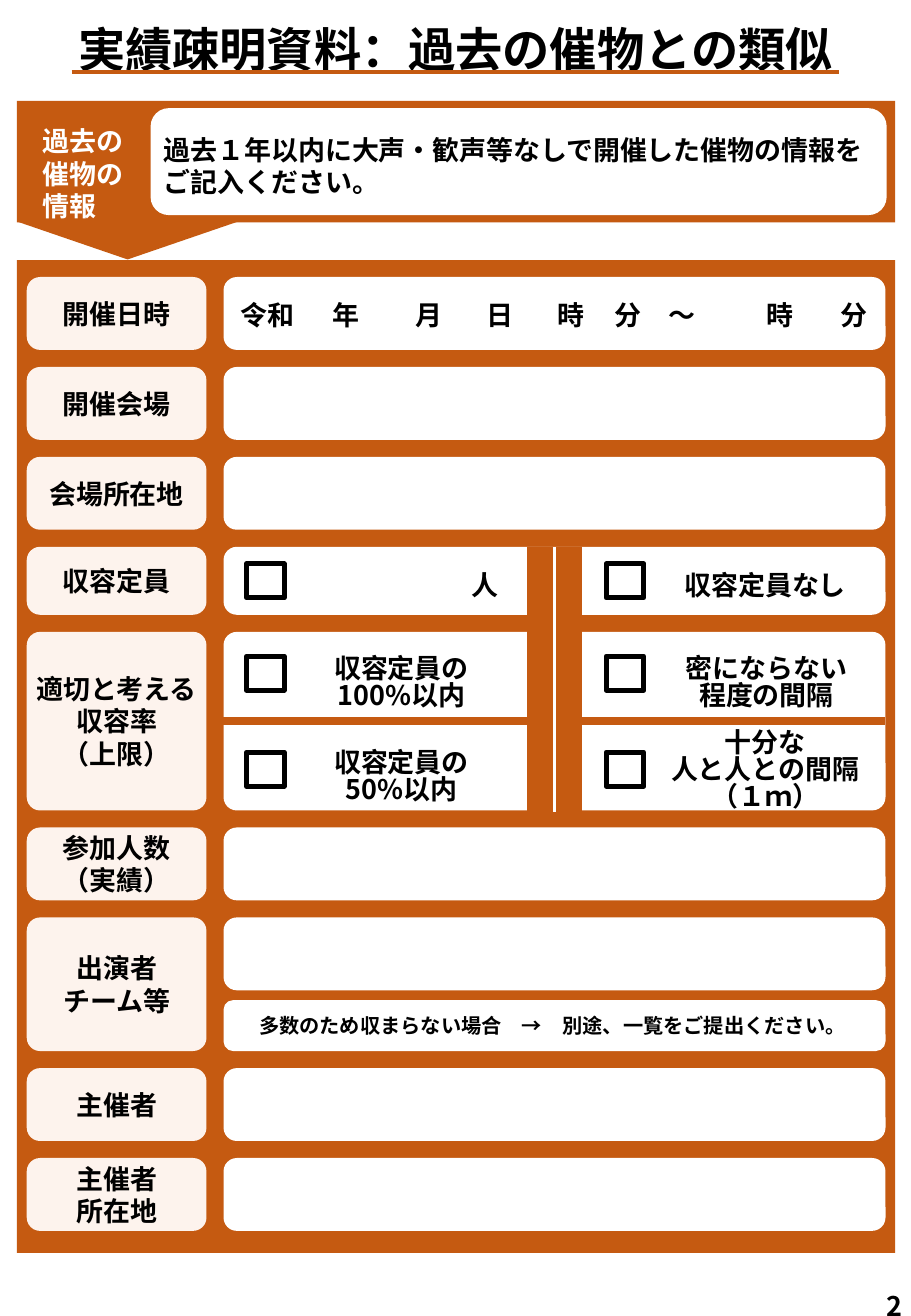
from pptx import Presentation
from pptx.dml.color import RGBColor
from pptx.enum.shapes import MSO_CONNECTOR as Link, MSO_SHAPE as Kind
from pptx.enum.text import MSO_ANCHOR as Anchor, PP_ALIGN as Align
from pptx.oxml.ns import qn
from pptx.util import Inches, Pt
from lxml.etree import SubElement

FONT = "Noto Sans CJK JP"
RUST, CREAM, WHITE, BLACK = "C55A11", "FDF3ED", "FFFFFF", "000000"
GAP = 0.14
RADIUS = 0.11
CHECKS = (0.19, 3.15)


def color(code):
    """Turn a hex string into a colour."""
    return RGBColor.from_string(code)


def write(shape, text, size=16, ink=BLACK, align=Align.CENTER, pitch=None, pad=(0.1, 0.05)):
    """Put formatted text into a shape."""
    frame = shape.text_frame
    frame.word_wrap = True
    frame.margin_left = frame.margin_right = Inches(pad[0])
    frame.margin_top = frame.margin_bottom = Inches(pad[1])
    frame.text = text
    for para in frame.paragraphs:
        para.alignment = align
        if pitch:
            para.line_spacing = Pt(pitch)
        for run in para.runs:
            font = run.font
            font.size, font.bold, font.name = Pt(size), True, FONT
            font.color.rgb = color(ink)
            SubElement(font._element, qn("a:ea")).set("typeface", FONT)


def label(slide, box, text, **style):
    """Add a text box."""
    write(slide.shapes.add_textbox(*map(Inches, box)), text, **style)


def block(slide, box, fill=None, kind=Kind.RECTANGLE, line=None):
    """Add a flat shape with an optional fill and outline."""
    shape = slide.shapes.add_shape(kind, *map(Inches, box))
    shape.shadow.inherit = False
    if fill:
        shape.fill.solid()
        shape.fill.fore_color.rgb = color(fill)
    else:
        shape.fill.background()
    if line:
        shape.line.color.rgb = color(line)
        shape.line.width = Pt(3)
    else:
        shape.line.fill.background()
    return shape


def card(slide, box, fill=WHITE, radius=RADIUS):
    """Add a rounded card whose corner radius is given in inches."""
    shape = block(slide, box, fill, Kind.ROUNDED_RECTANGLE)
    shape.adjustments[0] = radius / min(box[2:])
    return shape


def rule(slide, start, end, ink, width=2.25):
    """Draw a straight line."""
    line = slide.shapes.add_connector(Link.STRAIGHT, *map(Inches, start + end))
    line.line.color.rgb = color(ink)
    line.line.width = Pt(width)
    SubElement(line._element.spPr, qn("a:effectLst"))


def check(slide, x, y):
    """Add an empty tick box."""
    block(slide, (x, y, 0.31, 0.28), line=BLACK)


def title(slide, box):
    """Add the underlined heading."""
    x, y, w, h = box
    label(slide, box, "実績疎明資料：過去の催物との類似", size=28)
    rule(slide, (x + 0.11, y + 0.47), (x + w - 0.11, y + 0.47), RUST)


def intro(slide, box):
    """Add the banner with its downward pointer."""
    x, y, w, h = box
    tip = block(slide, (x + 0.6, y + 0.09, 0.62, 1.81), RUST, Kind.PENTAGON)
    tip.rotation = 90
    block(slide, box, RUST)
    card(slide, (x + 1.1, y + 0.06, w - 1.17, h - 0.12), radius=0.15)
    label(slide, (x + 0.11, y + 0.15, 1.15, 0.9), "過去の\n催物の\n情報", ink=WHITE, align=Align.LEFT)
    label(slide, (x + 1.11, y + 0.22, w - 1.12, 0.64),
          "過去１年以内に大声・歓声等なしで開催した催物の情報を\nご記入ください。", align=Align.LEFT)


def blank(slide, box):
    """Add an empty entry field."""
    card(slide, box)


def date(slide, box):
    """Add the date and time field."""
    x, y, w, h = box
    card(slide, box)
    marks = {0.36: "令和", 1.01: "年", 1.69: "月", 2.28: "日", 2.86: "時",
             3.55: "分　～", 4.58: "時", 5.19: "分"}
    for mid, text in marks.items():
        label(slide, (x + mid - 0.4, y + 0.17, 0.8, 0.32), text, pitch=16, pad=(0, 0.05))


def seats(slide, box):
    """Add the capacity choices."""
    x, y, w, h = box
    card(slide, box)
    label(slide, (x + 1.71, y + 0.17, 0.89, 0.29), "人", pitch=16)
    label(slide, (x + 3.65, y + 0.17, 1.62, 0.29), "収容定員なし", pitch=16)
    for left in CHECKS:
        check(slide, x + left, y + 0.14)


def rates(slide, box):
    """Add the four occupancy choices."""
    x, y, w, h = box
    card(slide, box)
    rule(slide, (x, y + h / 2), (x + w, y + h / 2), RUST, 4.5)
    for left, top, width, text in (
            (0.4, 0.16, 2.13, "収容定員の\n100%以内"),
            (3.66, 0.16, 1.62, "密にならない程度の間隔"),
            (0.4, 0.93, 2.13, "収容定員の\n50%以内"),
            (3.46, 0.77, 2, "十分な\n人と人との間隔\n（１ｍ）")):
        label(slide, (x + left, y + top, width, 0.5), text, pitch=16)
    for left in CHECKS:
        for top in (0.2, 0.99):
            check(slide, x + left, y + top)


def cast(slide, box):
    """Add the performer field and its note."""
    x, y, w, h = box
    card(slide, (x, y, w, 0.6))
    card(slide, (x, y + h - 0.42, w, 0.42), radius=0.08)
    label(slide, (x + 0.14, y + h - 0.38, w - 0.31, 0.33),
          "多数のため収まらない場合　→　別途、一覧をご提出ください。", size=12, pitch=16)


def split(slide, box):
    """Add the band that parts the two columns of choices."""
    x, y, w, h = box
    block(slide, box, RUST)
    rule(slide, (x + w / 2, y), (x + w / 2, y + h), WHITE)


ROWS = (("開催日時", 0.6, date), ("開催会場", 0.6, blank), ("会場所在地", 0.6, blank),
        ("収容定員", 0.56, seats), ("適切と考える\n収容率\n（上限）", 1.47, rates),
        ("参加人数\n（実績）", 0.6, blank), ("出演者\nチーム等", 1.1, cast),
        ("主催者", 0.6, blank), ("主催者\n所在地", 0.6, blank))


def form(slide, box):
    """Stack the named rows on the coloured panel."""
    x, y, w, h = box
    block(slide, box, RUST)
    top = y + GAP
    for name, tall, field in ROWS:
        head = card(slide, (x + 0.08, top, 1.48, tall), CREAM)
        write(head, name, pad=(0, 0.04))
        head.text_frame.vertical_anchor = Anchor.MIDDLE
        field(slide, (x + 1.7, top, w - 1.78, tall))
        top += tall + GAP
    split(slide, (x + 4.2, y + 2.36, 0.45, 2.18))


def main():
    """Build the form and save it."""
    deck = Presentation()
    deck.slide_width, deck.slide_height = Inches(7.5), Inches(10.83)
    slide = deck.slides.add_slide(deck.slide_layouts[6])
    intro(slide, (0.14, 0.83, 7.23, 1))
    form(slide, (0.14, 2.14, 7.23, 8.17))
    title(slide, (0.48, 0.12, 6.54, 0.57))
    label(slide, (7.22, 10.56, 0.28, 0.27), "2", align=Align.LEFT, pad=(0.08, 0.05))
    deck.save("out.pptx")


if __name__ == "__main__":
    main()
